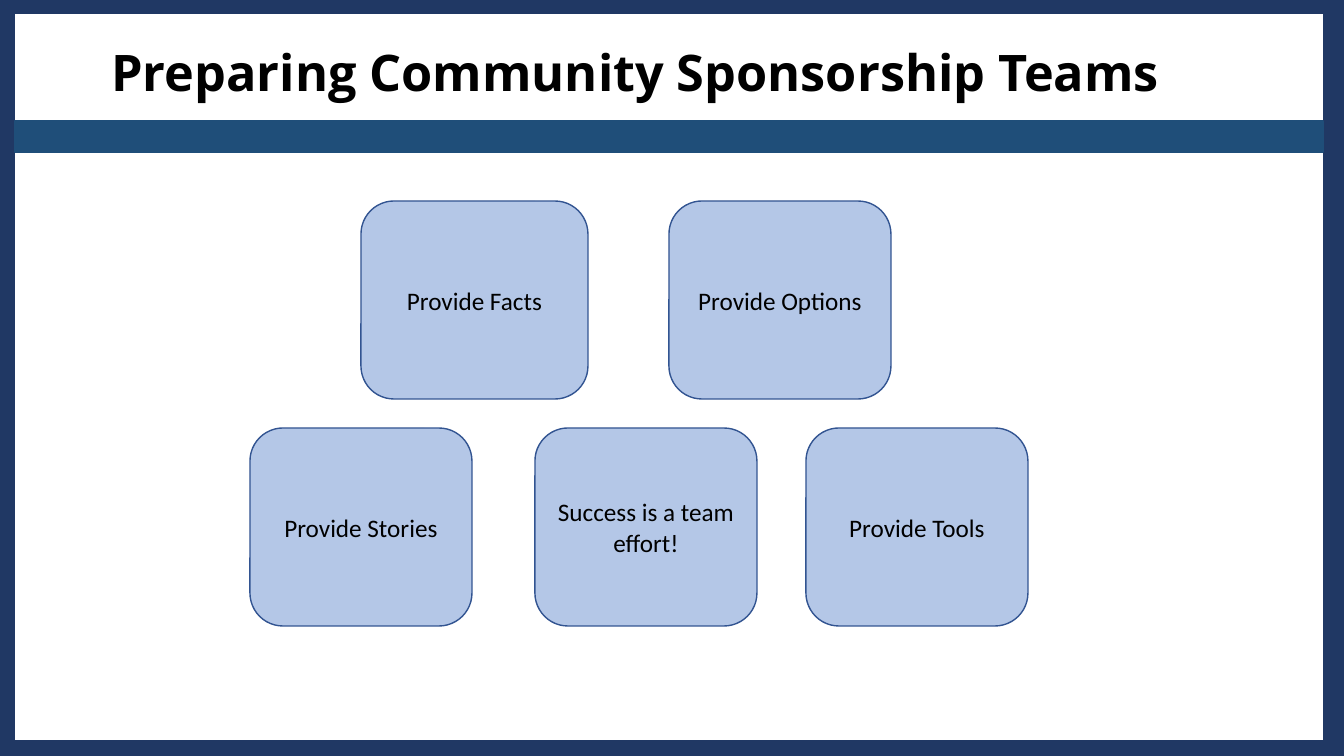
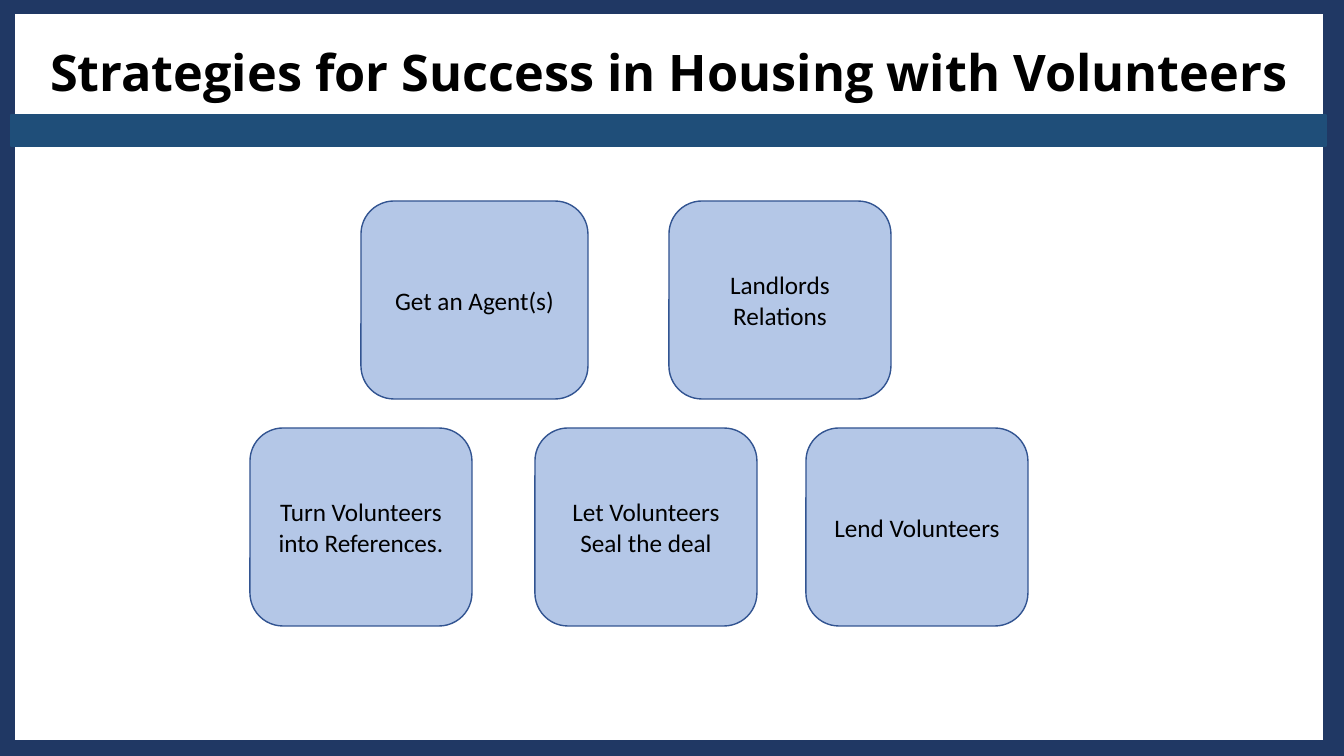
from dataclasses import dataclass

from pptx import Presentation
from pptx import util as u
from pptx.dml.color import RGBColor
from pptx.enum import shapes, text

SLIDE_W, SLIDE_H = 1344, 756
EMU_PER_PX = 12192000 / SLIDE_W


@dataclass(frozen=True)
class Theme:
    ink: RGBColor = RGBColor.from_string("000000")
    frame: RGBColor = RGBColor.from_string("203864")
    band: RGBColor = RGBColor.from_string("1F4E79")
    card: RGBColor = RGBColor.from_string("B4C7E7")
    card_edge: RGBColor = RGBColor.from_string("325491")
    title_font: str = "Open Sans"
    card_font: str = "Calibri"
    title_size: int = 36
    card_size: int = 18
    thin_line: int = 1
    frame_line: int = 20


THEME = Theme()

# Boxes as left, top, width, height
FRAME_BOX = (1, 0, 1336, 754)
CARDS_BOX = (250, 201, 778, 425)

# Card layout inside its area: left offset and width, row by row
CARD_H = 198
CARD_ROWS = (
    ((111, 227), (419, 222)),
    ((0, 222), (285, 222), (556, 222)),
)

SLIDES = (
    dict(
        title="Preparing Community Sponsorship Teams",
        title_box=(68, 36, 1135, 72),
        band_box=(15, 121, 1308, 31),
        cards=(
            ("Provide Facts", "Provide Options"),
            ("Provide Stories", "Success is a team effort!", "Provide Tools"),
        ),
    ),
    dict(
        title="Strategies for Success in Housing with Volunteers",
        title_box=(19, 36, 1300, 72),
        band_box=(11, 115, 1315, 31),
        cards=(
            ("Get an Agent(s)", "Landlords Relations"),
            ("Turn Volunteers into References.", "Let Volunteers Seal the deal",
             "Lend Volunteers"),
        ),
    ),
)


def px(length):
    return u.Emu(round(length * EMU_PER_PX))


def add_panel(slide, preset, box, fill, edge, edge_width):
    """Preset shape with a flat fill (or none) and an outline."""
    panel = slide.shapes.add_shape(preset, *map(px, box))
    panel.shadow.inherit = False
    if fill is None:
        panel.fill.background()
    else:
        panel.fill.solid()
        panel.fill.fore_color.rgb = fill
    panel.line.color.rgb = edge
    panel.line.width = u.Pt(edge_width)
    return panel


def write_centred(frame, words, font_name, size, bold=False):
    frame.word_wrap = True
    paragraph = frame.paragraphs[0]
    paragraph.alignment = text.PP_ALIGN.CENTER
    run = paragraph.add_run()
    run.text = words
    run.font.name = font_name
    run.font.size = u.Pt(size)
    run.font.bold = bold
    run.font.color.rgb = THEME.ink


def place_title(slide, words, box):
    title = slide.shapes.title
    title.left, title.top, title.width, title.height = map(px, box)
    frame = title.text_frame
    frame.auto_size = text.MSO_AUTO_SIZE.NONE
    frame.vertical_anchor = text.MSO_ANCHOR.TOP
    write_centred(frame, words, THEME.title_font, THEME.title_size, bold=True)


def place_cards(slide, rows, box):
    """Rows of cards: the first hangs from the top, the last sits on the bottom."""
    left, top, _, height = box
    row_step = (height - CARD_H) / (len(rows) - 1)
    for row, (labels, slots) in enumerate(zip(rows, CARD_ROWS)):
        for label, (offset, width) in zip(labels, slots):
            card_box = (left + offset, top + row * row_step, width, CARD_H)
            card = add_panel(slide, shapes.MSO_SHAPE.ROUNDED_RECTANGLE, card_box,
                             THEME.card, THEME.card_edge, THEME.thin_line)
            card.text_frame.vertical_anchor = text.MSO_ANCHOR.MIDDLE
            write_centred(card.text_frame, label, THEME.card_font, THEME.card_size)


def build_card_slide(deck, title, title_box, band_box, cards):
    slide = deck.slides.add_slide(deck.slide_layouts.get_by_name("Title Only"))
    place_title(slide, title, title_box)
    place_cards(slide, cards, CARDS_BOX)
    # Border around the slide, then the band under the title
    add_panel(slide, shapes.MSO_SHAPE.RECTANGLE, FRAME_BOX,
              None, THEME.frame, THEME.frame_line)
    add_panel(slide, shapes.MSO_SHAPE.RECTANGLE, band_box,
              THEME.band, THEME.band, THEME.thin_line)


def main():
    deck = Presentation()
    deck.slide_width, deck.slide_height = px(SLIDE_W), px(SLIDE_H)
    for content in SLIDES:
        build_card_slide(deck, **content)
    deck.save("out.pptx")


if __name__ == "__main__":
    main()
